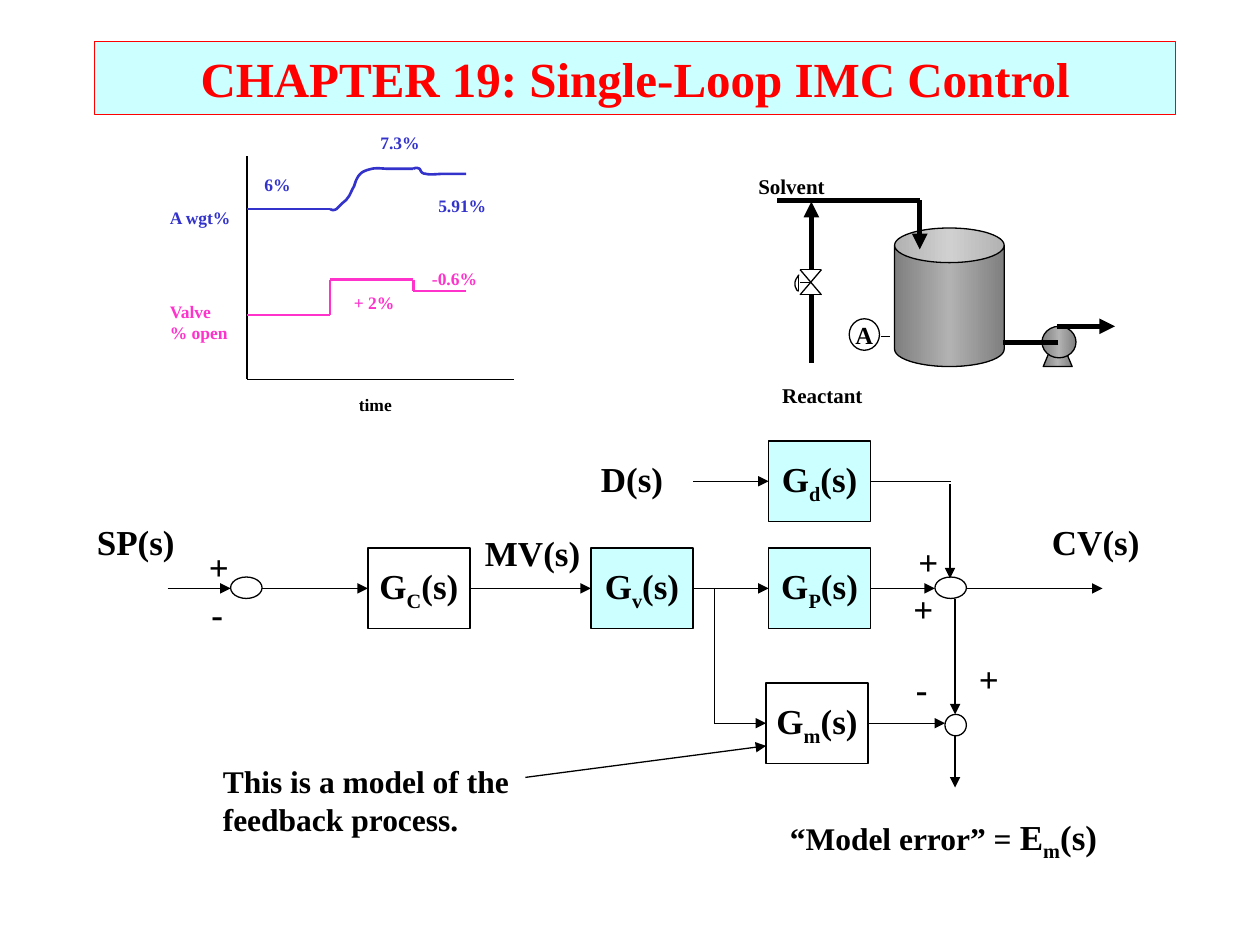
from copy import deepcopy

from lxml import etree
from pptx import Presentation
from pptx import util as u
from pptx.dml.color import RGBColor
from pptx.enum import shapes, text
from pptx.oxml import ns

FONT = "Times New Roman"
BLACK = RGBColor(0, 0, 0)
RED = RGBColor(255, 0, 0)
CYAN = RGBColor(0xCC, 0xFF, 0xFF)
BLUE = RGBColor(0x33, 0x33, 0xCC)
PINK = RGBColor(0xFF, 0x33, 0xCC)
STEEL = RGBColor(0x7F, 0x7F, 0x7F)
SHINE = RGBColor(0xB2, 0xB2, 0xB2)
THIN, TREND, PIPE = 0.75, 1.5, 3
ARROW = True
KIND = shapes.MSO_SHAPE
LEFT, RIGHT = 1, 3

TITLE = "CHAPTER 19: Single-Loop IMC Control"

BLOCKS = {
    "d": (6.1, 3.5, CYAN),
    "P": (6.1, 4.35, CYAN),
    "v": (4.69, 4.35, CYAN),
    "C": (2.92, 4.35, None),
    "m": (6.08, 5.42, None),
}
BLOCK_SIZE = (0.81, 0.64)
SUMS = [(1.83, 4.58, 0.25, 0.17), (7.42, 4.58, 0.25, 0.17), (7.5, 5.67, 0.17, 0.17)]

BLOCK_SIGNALS = [
    ("C", (3.75, 4.67), "v", (4.67, 4.67), ARROW),
    ("v", (5.5, 4.67), "P", (6.08, 4.67), ARROW),
    (None, (2.08, 4.67), "C", (2.92, 4.67), ARROW),
    ("P", (6.92, 4.67), None, (7.42, 4.67), ARROW),
    ("d", (6.92, 3.82), None, (7.55, 3.82), False),
    (None, (5.5, 3.82), "d", (6.08, 3.82), ARROW),
    (None, (5.67, 5.74), "m", (6.08, 5.74), ARROW),
    ("m", (6.92, 5.74), None, (7.5, 5.74), ARROW),
]
SIGNALS = [
    ((7.54, 3.84), (7.54, 4.59), ARROW),
    ((7.67, 4.67), (8.75, 4.67), ARROW),
    ((1.33, 4.67), (1.83, 4.67), ARROW),
    ((5.67, 4.67), (5.67, 5.74), False),
    ((7.58, 4.75), (7.58, 5.67), ARROW),
    ((7.58, 5.83), (7.58, 6.25), ARROW),
    ((4.17, 6.17), (6.08, 5.92), ARROW),
]

PIPES = [
    ((8.4, 2.72), (7.96, 2.72), False),
    ((8.39, 2.59), (8.85, 2.59), ARROW),
    ((7.3, 1.59), (7.3, 1.98), ARROW),
    ((7.3, 1.59), (6.17, 1.59), False),
    ((6.44, 2.34), (6.44, 2.88), False),
    ((6.44, 2.14), (6.44, 1.6), ARROW),
]
VALVE_AND_SENSOR = [
    ((6.52, 2.34), (6.35, 2.34)),
    ((6.52, 2.14), (6.35, 2.14)),
    ((6.35, 2.14), (6.52, 2.34)),
    ((6.52, 2.14), (6.35, 2.34)),
    ((6.44, 2.24), (6.35, 2.24)),
    ((6.34, 2.31), (6.34, 2.18)),
    ((6.99, 2.67), (7.06, 2.67)),
]
AXES = [((1.96, 1.24), (1.96, 3.01)), ((1.96, 3.01), (4.08, 3.01))]
VALVE_STEPS = [(1.96, 2.5), (2.62, 2.5), (2.62, 2.22), (3.28, 2.22), (3.28, 2.31), (3.7, 2.31)]

ACTUATOR = [(6.34, 2.18), (6.34, 2.19), (6.33, 2.19), (6.33, 2.2), (6.32, 2.21),
            (6.31, 2.23), (6.31, 2.25), (6.31, 2.26), (6.31, 2.28), (6.32, 2.29),
            (6.32, 2.3), (6.33, 2.31), (6.34, 2.31)]
RISE = [(2.62, 1.66), (2.64, 1.67), (2.65, 1.67), (2.67, 1.66), (2.68, 1.65), (2.7, 1.63),
        (2.71, 1.62), (2.73, 1.6), (2.75, 1.59), (2.76, 1.57), (2.78, 1.55), (2.79, 1.51),
        (2.81, 1.48), (2.82, 1.45), (2.83, 1.41), (2.86, 1.38), (2.88, 1.36), (2.91, 1.35),
        (2.95, 1.34), (2.99, 1.33), (3.04, 1.34), (3.09, 1.34), (3.15, 1.34), (3.21, 1.34),
        (3.28, 1.34)]
SETTLE = [(3.28, 1.34), (3.3, 1.33), (3.31, 1.33), (3.33, 1.34), (3.34, 1.35), (3.34, 1.38),
          (3.38, 1.38), (3.41, 1.39), (3.48, 1.38), (3.52, 1.38), (3.56, 1.38), (3.58, 1.38),
          (3.61, 1.38), (3.64, 1.38), (3.69, 1.38), (3.7, 1.38)]

SNUG, WRAPPED = False, True
LABELS = [
    (["Reactant"], 6.11, 2.99, 1.06, 0.3, 12, BLACK, WRAPPED),
    (["Solvent"], 5.92, 1.33, 1, 0.3, 12, BLACK, WRAPPED),
    (["time"], 2.75, 3.08, 0.47, 0.27, 10, BLACK, SNUG),
    (["Valve", "% open"], 1.25, 2.34, 0.66, 0.43, 10, PINK, SNUG),
    (["A wgt%"], 1.25, 1.59, 0.73, 0.27, 10, BLUE, SNUG),
    (["+ 2%"], 2.71, 2.27, 0.54, 0.27, 10, PINK, WRAPPED),
    (["6%"], 2, 1.33, 0.41, 0.27, 10, BLUE, SNUG),
    (["7.3%"], 2.92, 1, 0.51, 0.27, 10, BLUE, SNUG),
    (["-0.6%"], 3.33, 2.08, 0.59, 0.27, 10, PINK, WRAPPED),
    (["5.91%"], 3.38, 1.5, 0.58, 0.27, 10, BLUE, SNUG),
    (["D(s)"], 4.67, 3.58, 0.75, 0.43, 20, BLACK, WRAPPED),
    (["CV(s)"], 8.25, 4.08, 0.92, 0.43, 20, BLACK, WRAPPED),
    (["SP(s)"], 0.67, 4.08, 0.92, 0.43, 20, BLACK, WRAPPED),
    (["MV(s)"], 3.75, 4.17, 1.08, 0.43, 20, BLACK, WRAPPED),
    (["This is a model of the feedback process."], 1.67, 6, 2.92, 0.7, 18, BLACK, WRAPPED),
]
SIGNS = [("+", 7.19, 4.24), ("+", 7.15, 4.61), ("+", 1.56, 4.28), ("-", 1.58, 4.65),
         ("-", 7.17, 5.25), ("+", 7.67, 5.17)]
SIGN_WIDTH = {"+": 0.36, "-": 0.29}


def cm(*inches):
    return [u.Cm(2.54 * value) for value in inches]


def style(paragraph, size, colour=BLACK):
    font = paragraph.font
    font.name, font.size, font.bold = FONT, u.Pt(size), True
    font.color.rgb = colour


def add_symbol(paragraph, letter, subscript):
    for part, baseline in ((letter, 0), (subscript, -25000), ("(s)", 0)):
        run = paragraph.add_run()
        run.text = part
        run._r.get_or_add_rPr().set("baseline", str(baseline))


def add_label(lines, left, top, width, height, size, colour, wrap):
    frame = slide.shapes.add_textbox(*cm(left, top, width, height)).text_frame
    frame.word_wrap = wrap
    frame.text = "\n".join(lines)
    for paragraph in frame.paragraphs:
        style(paragraph, size, colour)
    return frame.paragraphs[0]


def outline(shape, colour=BLACK, width=THIN):
    shape.shadow.inherit = False
    shape.line.color.rgb = colour
    shape.line.width = u.Pt(width)


def add_part(kind, box, fill=None):
    part = slide.shapes.add_shape(kind, *cm(*box))
    outline(part)
    if fill is None:
        part.fill.background()
    else:
        part.fill.solid()
        part.fill.fore_color.rgb = fill
    return part


def add_metal(kind, box):
    part = add_part(kind, box)
    part.fill.gradient()
    part.fill.gradient_angle = 0
    stops = part._element.spPr.find(".//" + ns.qn("a:gsLst"))
    stops.append(deepcopy(stops[0]))
    for stop, place, shade in zip(part.fill.gradient_stops, (0, 0.5, 1), (STEEL, SHINE, STEEL)):
        stop.position = place
        stop.color.rgb = shade
    return part


def centre_text(part, size):
    frame = part.text_frame
    frame.word_wrap = False
    frame.vertical_anchor = text.MSO_ANCHOR.MIDDLE
    paragraph = frame.paragraphs[0]
    paragraph.alignment = text.PP_ALIGN.CENTER
    style(paragraph, size)
    return paragraph


def add_line(start, end, arrow=False, colour=BLACK, width=THIN):
    line = slide.shapes.add_connector(shapes.MSO_CONNECTOR.STRAIGHT, *cm(*start, *end))
    line.line.color.rgb = colour
    line.line.width = u.Pt(width)
    properties = line._element.spPr
    if arrow:
        etree.SubElement(properties.find(ns.qn("a:ln")), ns.qn("a:tailEnd"), type="triangle")
    etree.SubElement(properties, ns.qn("a:effectLst"))
    return line


def add_curve(knots, colour, width, steps=6):
    points = [knots[0]]
    for first in range(0, len(knots) - 1, 3):
        for step in range(1, steps + 1):
            t = step / steps
            weights = ((1 - t) ** 3, 3 * t * (1 - t) ** 2, 3 * t * t * (1 - t), t ** 3)
            segment = zip(*knots[first:first + 4])
            points.append(tuple(sum(w * v for w, v in zip(weights, axis)) for axis in segment))
    track = [cm(*point) for point in points]
    builder = slide.shapes.build_freeform(*track[0])
    builder.add_line_segments(track[1:], close=False)
    curve = builder.convert_to_shape()
    curve.fill.background()
    outline(curve, colour, width)


deck = Presentation()
deck.slide_width, deck.slide_height = cm(10, 7.5)
slide = deck.slides.add_slide(deck.slide_layouts[5])

title = slide.shapes.title
title.left, title.top, title.width, title.height = cm(0.75, 0.33, 8.58, 0.58)
title.text = TITLE
title.text_frame.auto_size = text.MSO_AUTO_SIZE.NONE
title.text_frame.vertical_anchor = text.MSO_ANCHOR.MIDDLE
title.text_frame.paragraphs[0].alignment = text.PP_ALIGN.CENTER
style(title.text_frame.paragraphs[0], 28, RED)
title.fill.solid()
title.fill.fore_color.rgb = CYAN
title.line.color.rgb = RED
title.line.width = u.Pt(THIN)

tank = add_metal(KIND.CAN, (7.1, 1.81, 0.87, 1.1))
tank.adjustments[0] = 0.316
pump_base = add_metal(KIND.FLOWCHART_MANUAL_OPERATION, (8.28, 2.8, 0.23, 0.11))
pump_base._element.spPr.xfrm.set("flipV", "1")
add_metal(KIND.OVAL, (8.27, 2.59, 0.27, 0.25))
analyzer = add_part(KIND.OVAL, (6.74, 2.53, 0.24, 0.25))
centre_text(analyzer, 14).add_run().text = "A"
for start, end, arrow in PIPES:
    add_line(start, end, arrow, width=PIPE)
for start, end in VALVE_AND_SENSOR + AXES:
    add_line(start, end)
add_curve(ACTUATOR, BLACK, THIN)

add_line((1.96, 1.66), RISE[0], colour=BLUE, width=TREND)
for knots in (RISE, SETTLE):
    add_curve(knots, BLUE, TREND)
for start, end in zip(VALVE_STEPS, VALVE_STEPS[1:]):
    add_line(start, end, colour=PINK, width=TREND)

blocks = {}
for subscript, (left, top, fill) in BLOCKS.items():
    blocks[subscript] = add_part(KIND.RECTANGLE, (left, top, *BLOCK_SIZE), fill)
    add_symbol(centre_text(blocks[subscript], 20), "G", subscript)
for box in SUMS:
    add_part(KIND.OVAL, box)
for source, start, target, end, arrow in BLOCK_SIGNALS:
    signal = add_line(start, end, arrow)
    if source:
        signal.begin_connect(blocks[source], RIGHT)
    if target:
        signal.end_connect(blocks[target], LEFT)
for start, end, arrow in SIGNALS:
    add_line(start, end, arrow)

for label in LABELS:
    add_label(*label)
for sign, left, top in SIGNS:
    add_label([sign], left, top, SIGN_WIDTH[sign], 0.43, 20, BLACK, SNUG)
model_error = add_label(["“Model error” = "], 6.17, 6.42, 2.92, 0.43, 20, BLACK, WRAPPED)
model_error.runs[0].font.size = u.Pt(18)
add_symbol(model_error, "E", "m")

deck.save("out.pptx")
